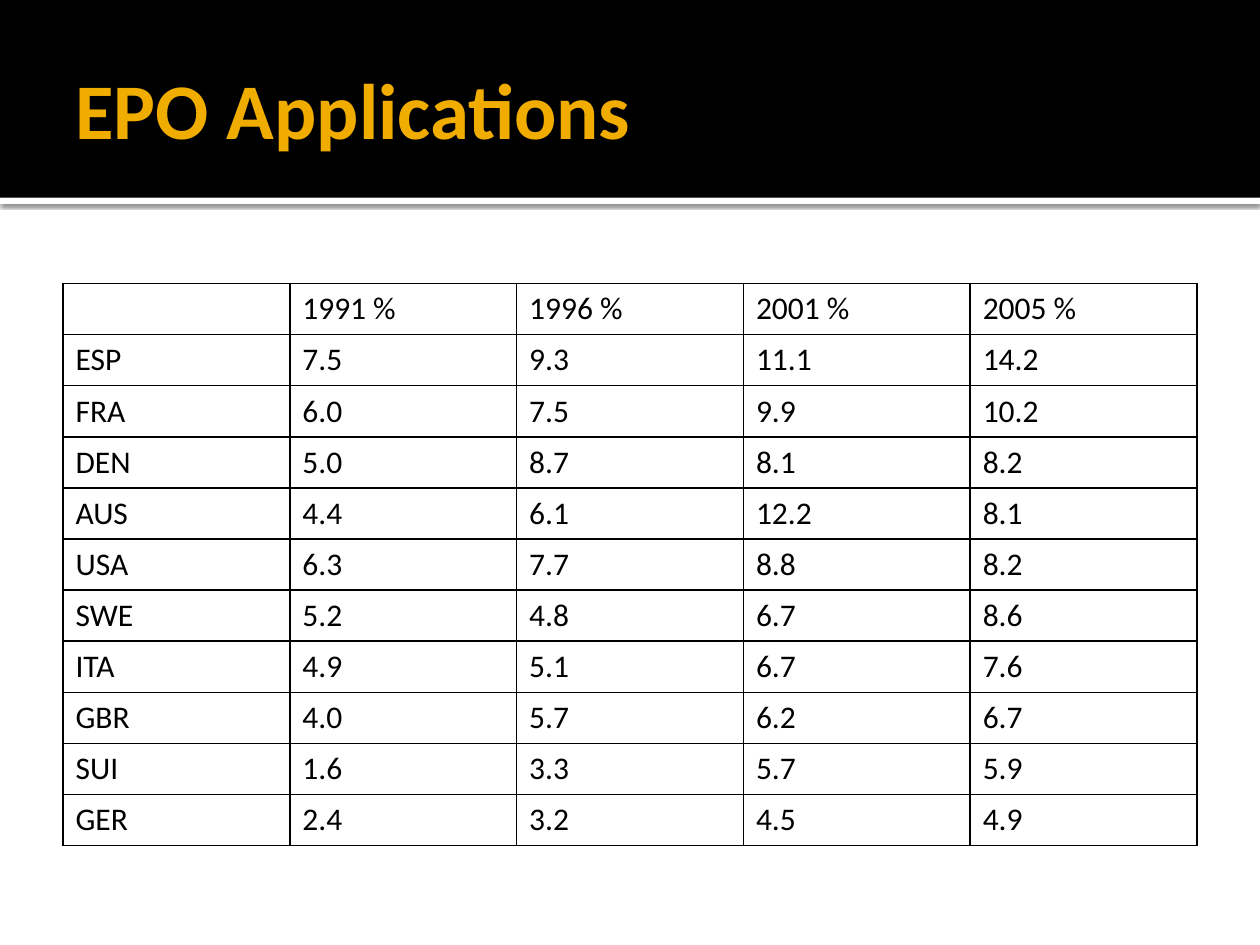
from lxml import etree
from pptx import Presentation
from pptx.dml.color import RGBColor
from pptx.enum.shapes import MSO_SHAPE
from pptx.enum.text import MSO_ANCHOR, PP_ALIGN
from pptx.oxml import parse_xml
from pptx.oxml.ns import nsdecls, qn
from pptx.util import Pt

RECTANGLE = MSO_SHAPE.RECTANGLE
MIDDLE = MSO_ANCHOR.MIDDLE
LEFT = PP_ALIGN.LEFT

BLACK = RGBColor(0x00, 0x00, 0x00)
WHITE = RGBColor(0xFF, 0xFF, 0xFF)
GOLD = RGBColor(0xF0, 0xAD, 0x00)

TITLE_FONT = {"name": "Calibri", "size": Pt(45), "bold": True}
CELL_FONT = {"name": "Calibri", "size": Pt(18), "bold": False}

ROWS = [
    ["", "1991 %", "1996 %", "2001 %", "2005 %"],
    ["ESP", "7.5", "9.3", "11.1", "14.2"],
    ["FRA", "6.0", "7.5", "9.9", "10.2"],
    ["DEN", "5.0", "8.7", "8.1", "8.2"],
    ["AUS", "4.4", "6.1", "12.2", "8.1"],
    ["USA", "6.3", "7.7", "8.8", "8.2"],
    ["SWE", "5.2", "4.8", "6.7", "8.6"],
    ["ITA", "4.9", "5.1", "6.7", "7.6"],
    ["GBR", "4.0", "5.7", "6.2", "6.7"],
    ["SUI", "1.6", "3.3", "5.7", "5.9"],
    ["GER", "2.4", "3.2", "4.5", "4.9"],
]
COLUMN_WIDTH = 129.6
ROW_HEIGHT = 29.2


def format_text(paragraph, font_values, color):
    paragraph.alignment = LEFT
    for run in paragraph.runs:
        for name, value in font_values.items():
            setattr(run.font, name, value)
        run.font.color.rgb = color


def add_borders(cell, color, width):
    properties = cell._tc.get_or_add_tcPr()
    for index, side in enumerate(("lnL", "lnR", "lnT", "lnB")):
        properties.insert(index, parse_xml(
            f'<a:{side} {nsdecls("a")} w="{width}"><a:solidFill>'
            f'<a:srgbClr val="{color}"/></a:solidFill></a:{side}>'))


presentation = Presentation()
presentation.slide_width = Pt(720)
presentation.slide_height = Pt(540)
slide = presentation.slides.add_slide(presentation.slide_layouts[5])

# Header band with a white strip below it
bands = []
for top, height, color in ((113, 3.6, WHITE), (0, 113, BLACK)):
    band = slide.shapes.add_shape(RECTANGLE, 0, Pt(top), Pt(720), Pt(height))
    band.shadow.inherit = False
    band.fill.solid()
    band.fill.fore_color.rgb = color
    band.line.fill.background()
    bands.append(band)

# Soft shadow under the strip
effects = bands[0].element.spPr.find(qn("a:effectLst"))
shadow = etree.SubElement(effects, qn("a:outerShdw"), blurRad=str(Pt(2.5)),
                          dist=str(Pt(0.8)), dir="5400000", algn="tl", rotWithShape="0")
shadow_color = etree.SubElement(shadow, qn("a:srgbClr"), val=str(BLACK))
etree.SubElement(shadow_color, qn("a:alpha"), val="60000")

# Title, brought in front of the band
title = slide.shapes.title
title.left, title.top, title.width, title.height = Pt(36), Pt(12.24), Pt(648), Pt(98.64)
title.element.getparent().append(title.element)
title_frame = title.text_frame
title_frame.text = "EPO Applications"
frame_values = {
    "vertical_anchor": MIDDLE, "word_wrap": True, "margin_left": Pt(7.2),
    "margin_right": Pt(3.6), "margin_top": Pt(3.6), "margin_bottom": Pt(3.6),
}
for name, value in frame_values.items():
    setattr(title_frame, name, value)
format_text(title_frame.paragraphs[0], TITLE_FONT, GOLD)

# Table of application shares
table = slide.shapes.add_table(
    len(ROWS), len(ROWS[0]), Pt(36), Pt(162),
    Pt(COLUMN_WIDTH * len(ROWS[0])), Pt(ROW_HEIGHT * len(ROWS))).table
table.first_row = False
table.horz_banding = False
for column in table.columns:
    column.width = Pt(COLUMN_WIDTH)
for row, values in zip(table.rows, ROWS):
    row.height = Pt(ROW_HEIGHT)
    for cell, value in zip(row.cells, values):
        cell.text = value
        cell.fill.background()
        add_borders(cell, BLACK, Pt(1))
        format_text(cell.text_frame.paragraphs[0], CELL_FONT, BLACK)

presentation.save("out.pptx")
